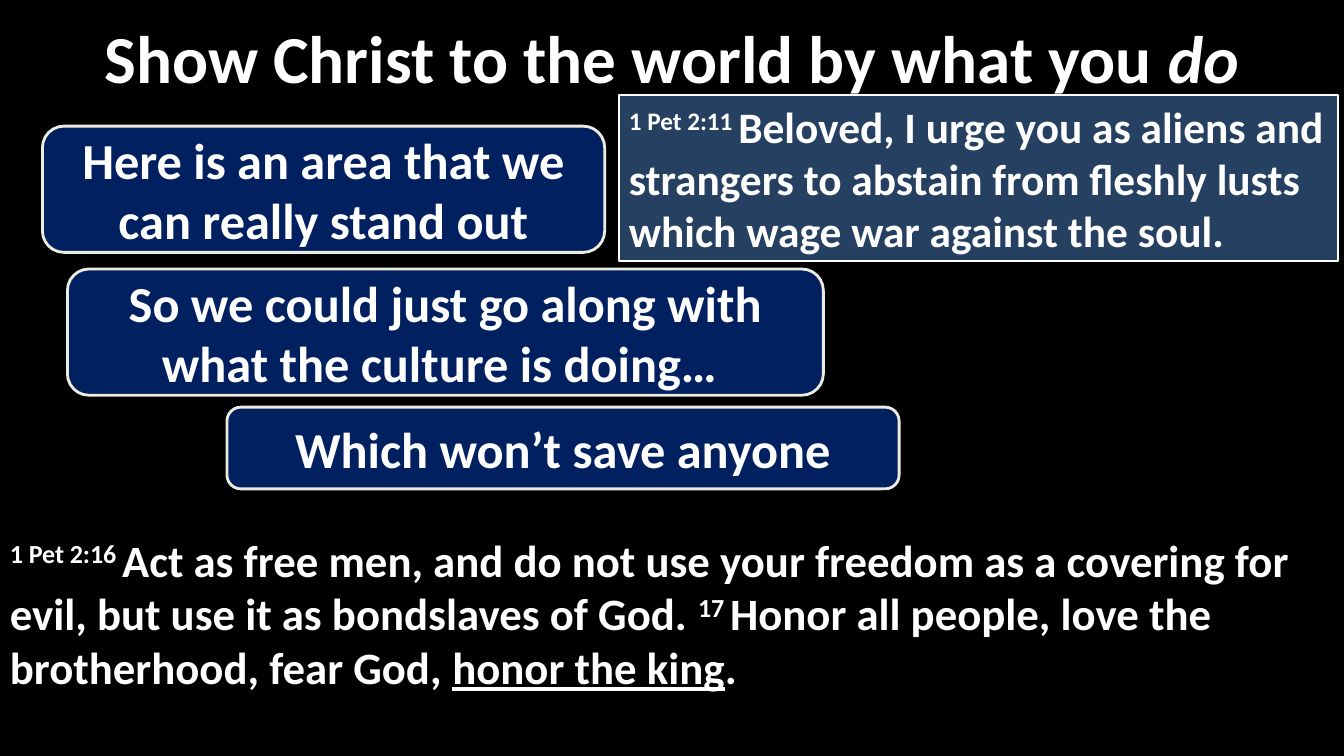
"""Build the slide on showing Christ to the world by what you do."""
from dataclasses import dataclass
from typing import Optional

import pptx
import pptx.dml.color
import pptx.enum.shapes
import pptx.enum.text
import pptx.util

Cm = pptx.util.Cm
Pt = pptx.util.Pt
RGBColor = pptx.dml.color.RGBColor
Preset = pptx.enum.shapes.MSO_SHAPE
Align = pptx.enum.text.PP_ALIGN

BLACK = RGBColor(0x00, 0x00, 0x00)
WHITE = RGBColor(0xFF, 0xFF, 0xFF)
NAVY = RGBColor(0x00, 0x20, 0x60)
SLATE = RGBColor(0x25, 0x40, 0x61)
IVORY = RGBColor(0xEE, 0xEC, 0xE1)
CALLOUT_TAIL = (-0.22, 0.5, 0.17)


@dataclass(frozen=True)
class Phrase:
    text: str
    italic: bool = False
    underline: bool = False
    superscript: bool = False


@dataclass(frozen=True)
class Box:
    left: float
    top: float
    width: float
    height: float


@dataclass(frozen=True)
class Panel:
    box: Box
    phrases: tuple[Phrase, ...]
    size: float
    fill: RGBColor
    border: Optional[RGBColor] = None
    border_width: float = 0
    preset: Preset = Preset.RECTANGLE
    align: Align = Align.LEFT


def callout(box: Box, text: str) -> Panel:
    return Panel(box, (Phrase(text),), 36, NAVY, IVORY, 2,
                 Preset.ROUNDED_RECTANGULAR_CALLOUT, Align.CENTER)


HEADING_BOX = Box(1.47, 0.1, 30.91, 2.67)
HEADING = (Phrase("Show Christ to the world by what you "), Phrase("do", italic=True))

PANELS = (
    Panel(
        Box(0, 11.84, 33.87, 7.21),
        (
            Phrase("1 Pet 2:16 ", superscript=True),
            Phrase("Act as free men, and do not use your freedom as a covering for evil, "
                   "but use it as bondslaves of God. "),
            Phrase("17 ", superscript=True),
            Phrase("Honor all people, love the brotherhood, fear God, "),
            Phrase("honor the king", underline=True),
            Phrase("."),
        ),
        32, BLACK,
    ),
    callout(Box(1.07, 3.18, 14.17, 3.18), "Here is an area that we can really stand out"),
    callout(Box(1.7, 6.78, 19.05, 3.18),
            "So we could just go along with what the culture is doing… "),
    callout(Box(5.72, 10.26, 16.94, 2.06), "Which won’t save anyone"),
    Panel(
        Box(15.6, 2.39, 18.11, 4.19),
        (
            Phrase("1 Pet 2:11 ", superscript=True),
            Phrase("Beloved, I urge you as aliens and strangers to abstain from fleshly "
                   "lusts which wage war against the soul."),
        ),
        31, SLATE, WHITE, 1.5,
    ),
)


def write(frame: pptx.text.text.TextFrame, phrases: tuple[Phrase, ...],
          size: float, align: Align) -> None:
    frame.word_wrap = True
    frame.auto_size = pptx.enum.text.MSO_AUTO_SIZE.NONE
    frame.vertical_anchor = pptx.enum.text.MSO_ANCHOR.MIDDLE
    paragraph = frame.paragraphs[0]
    paragraph.alignment = align
    for phrase in phrases:
        run = paragraph.add_run()
        run.text = phrase.text
        run.font.name = "Calibri"
        run.font.size = Pt(size)
        run.font.bold = True
        run.font.italic = phrase.italic
        run.font.underline = phrase.underline
        run.font.color.rgb = WHITE
        if phrase.superscript:
            run.font._element.set("baseline", "30000")


def draw_panel(slide: pptx.slide.Slide, panel: Panel) -> None:
    box = panel.box
    shape = slide.shapes.add_shape(
        panel.preset, Cm(box.left), Cm(box.top), Cm(box.width), Cm(box.height))
    shape.shadow.inherit = False
    shape.fill.solid()
    shape.fill.fore_color.rgb = panel.fill
    if panel.border is None:
        shape.line.fill.background()
    else:
        shape.line.color.rgb = panel.border
        shape.line.width = Pt(panel.border_width)
    if panel.preset == Preset.ROUNDED_RECTANGULAR_CALLOUT:
        for index, value in enumerate(CALLOUT_TAIL):
            shape.adjustments[index] = value
    write(shape.text_frame, panel.phrases, panel.size, panel.align)


def draw_heading(slide: pptx.slide.Slide) -> None:
    heading = slide.shapes.title
    heading.left, heading.top = Cm(HEADING_BOX.left), Cm(HEADING_BOX.top)
    heading.width, heading.height = Cm(HEADING_BOX.width), Cm(HEADING_BOX.height)
    write(heading.text_frame, HEADING, 48, Align.CENTER)


def main() -> None:
    presentation = pptx.Presentation()
    presentation.slide_width = Cm(33.87)
    presentation.slide_height = Cm(19.05)
    slide = presentation.slides.add_slide(presentation.slide_layouts.get_by_name("Title Only"))
    slide.background.fill.solid()
    slide.background.fill.fore_color.rgb = BLACK
    draw_heading(slide)
    for panel in PANELS:
        draw_panel(slide, panel)
    presentation.save("out.pptx")


if __name__ == "__main__":
    main()
